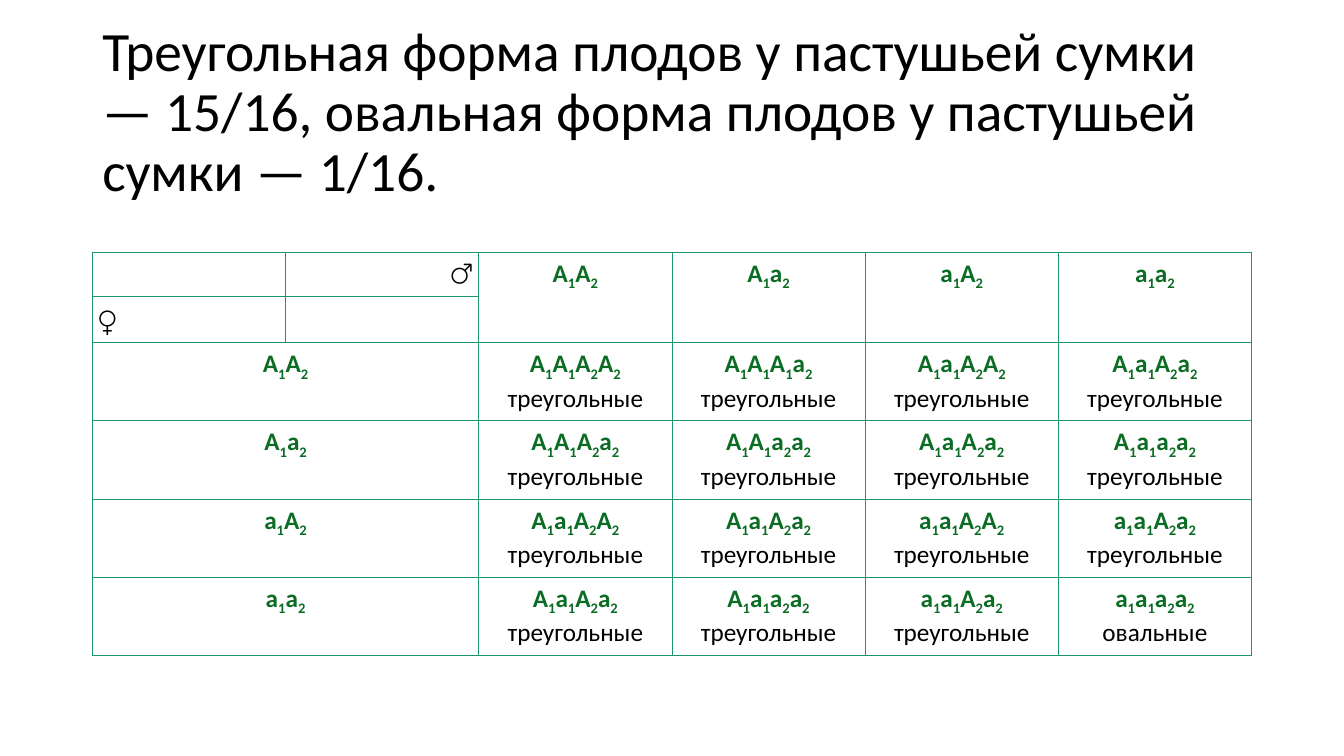
import itertools
from dataclasses import dataclass

import lxml.etree
import pptx
import pptx.dml.color
import pptx.enum.text
import pptx.oxml.ns
import pptx.util

ALIGN = pptx.enum.text.PP_ALIGN
ANCHOR = pptx.enum.text.MSO_ANCHOR


@dataclass(frozen=True)
class Theme:
    """Colours, font, type sizes and line weight of the slide."""

    ink: str = "000000"
    genotype: str = "0B6C24"
    border: str = "1E9669"
    font: str = "Calibri"
    title_size: float = 39.6
    table_size: float = 18
    border_width: float = 0.75
    inset: float = 0.06


THEME = Theme()
SLIDE_WIDTH, SLIDE_HEIGHT = pptx.util.Inches(13.333), pptx.util.Inches(7.5)
GRID_COLUMNS, GRID_ROWS = 160, 90
TITLE_BOX = (11, 4.8, 138, 17.4)
TABLE_LEFT, TABLE_TOP, COLUMN_WIDTH = 11, 30, 23
ROW_HEIGHTS = [5.28, 5.45] + [9.3] * 4

TITLE = (
    "Треугольная форма плодов у пастушьей сумки — 15/16, "
    "овальная форма плодов у пастушьей сумки — 1/16."
)
GAMETES = ["A1A2", "A1a2", "a1A2", "a1a2"]
OFFSPRING = [
    ["A1A1A2A2", "A1A1A1a2", "A1a1A2A2", "A1a1A2a2"],
    ["A1A1A2a2", "A1A1a2a2", "A1a1A2a2", "A1a1а2a2"],
    ["A1a1A2A2", "A1a1A2a2", "a1a1A2A2", "a1a1A2a2"],
    ["A1a1A2a2", "A1a1a2a2", "a1a1A2a2", "a1a1a2a2"],
]
RECESSIVE = "a1a1a2a2"


def grid_x(columns):
    """Return the length of a number of grid columns."""
    return round(SLIDE_WIDTH * columns / GRID_COLUMNS)


def grid_y(rows):
    """Return the length of a number of grid rows."""
    return round(SLIDE_HEIGHT * rows / GRID_ROWS)


def apply_format(target, values):
    """Set each attribute named in a dict of format values."""
    for name, value in values.items():
        setattr(target, name, value)


def add_run(paragraph, text, size, colour=THEME.ink, bold=False):
    """Add a formatted run to a paragraph and return it."""
    run = paragraph.add_run()
    run.text = text
    apply_format(run.font, {"name": THEME.font, "size": pptx.util.Pt(size), "bold": bold})
    run.font.color.rgb = pptx.dml.color.RGBColor.from_string(colour)
    return run


def add_genotype(paragraph, genotype):
    """Write a genotype with its gene numbers as subscripts."""
    for symbol in genotype:
        run = add_run(paragraph, symbol, THEME.table_size, THEME.genotype, True)
        if symbol.isdigit():
            run._r.get_or_add_rPr().set("baseline", "-25000")


def add_title(slide):
    """Add the statement of the phenotype ratio."""
    left, top, width, height = TITLE_BOX
    title = slide.shapes.add_textbox(grid_x(left), grid_y(top), grid_x(width), grid_y(height))
    apply_format(title.text_frame, {"word_wrap": True, "vertical_anchor": ANCHOR.MIDDLE})
    statement = title.text_frame.paragraphs[0]
    statement.line_spacing = 0.9
    add_run(statement, TITLE, THEME.title_size)


def style_cell(cell):
    """Clear the fill of a cell, set its insets and draw its borders."""
    inset = pptx.util.Inches(THEME.inset)
    sides = ("left", "right", "top", "bottom")
    apply_format(cell, {f"margin_{side}": inset for side in sides})
    cell.fill.background()
    properties = cell._tc.get_or_add_tcPr()
    qn = pptx.oxml.ns.qn
    for position, side in enumerate("LRTB"):
        line = lxml.etree.Element(qn(f"a:ln{side}"), w=str(pptx.util.Pt(THEME.border_width)))
        paint = lxml.etree.SubElement(line, qn("a:solidFill"))
        lxml.etree.SubElement(paint, qn("a:srgbClr"), val=THEME.border)
        properties.insert(position, line)


def add_punnett_table(slide):
    """Add the empty Punnett square with its merged headers."""
    rows, columns = len(ROW_HEIGHTS), len(GAMETES) + 2
    table = slide.shapes.add_table(
        rows, columns, grid_x(TABLE_LEFT), grid_y(TABLE_TOP),
        grid_x(COLUMN_WIDTH * columns), grid_y(sum(ROW_HEIGHTS)),
    ).table
    apply_format(table, {"first_row": False, "horz_banding": False})
    for column in table.columns:
        column.width = grid_x(COLUMN_WIDTH)
    for row, height in zip(table.rows, ROW_HEIGHTS):
        row.height = grid_y(height)
    for row, column in itertools.product(range(rows), range(columns)):
        style_cell(table.cell(row, column))
    for index in range(2, columns):
        table.cell(0, index).merge(table.cell(1, index))
        table.cell(index, 0).merge(table.cell(index, 1))
    return table


def fill_genotype(cell, genotype, phenotype=""):
    """Write a centred genotype with an optional phenotype below it."""
    paragraph = cell.text_frame.paragraphs[0]
    paragraph.alignment = ALIGN.CENTER
    add_genotype(paragraph, genotype)
    if phenotype:
        paragraph.add_line_break()
        add_run(paragraph, phenotype, THEME.table_size)


def fill_sex(cell, symbol, alignment, anchor):
    """Write the sign of a parent in a corner cell."""
    cell.vertical_anchor = anchor
    paragraph = cell.text_frame.paragraphs[0]
    paragraph.alignment = alignment
    add_run(paragraph, symbol, THEME.table_size)


def fill_table(table):
    """Write the parents, gametes and offspring."""
    fill_sex(table.cell(0, 1), "♂", ALIGN.RIGHT, ANCHOR.TOP)
    fill_sex(table.cell(1, 0), "♀", ALIGN.LEFT, ANCHOR.BOTTOM)
    for index, gamete in enumerate(GAMETES, start=2):
        fill_genotype(table.cell(0, index), gamete)
        fill_genotype(table.cell(index, 0), gamete)
    for row, genotypes in enumerate(OFFSPRING, start=2):
        for column, genotype in enumerate(genotypes, start=2):
            phenotype = "овальные" if genotype == RECESSIVE else "треугольные"
            fill_genotype(table.cell(row, column), genotype, phenotype)


def main():
    """Build the slide and save it."""
    presentation = pptx.Presentation()
    apply_format(presentation, {"slide_width": SLIDE_WIDTH, "slide_height": SLIDE_HEIGHT})
    slide = presentation.slides.add_slide(presentation.slide_layouts[6])
    add_title(slide)
    fill_table(add_punnett_table(slide))
    presentation.save("out.pptx")


if __name__ == "__main__":
    main()
